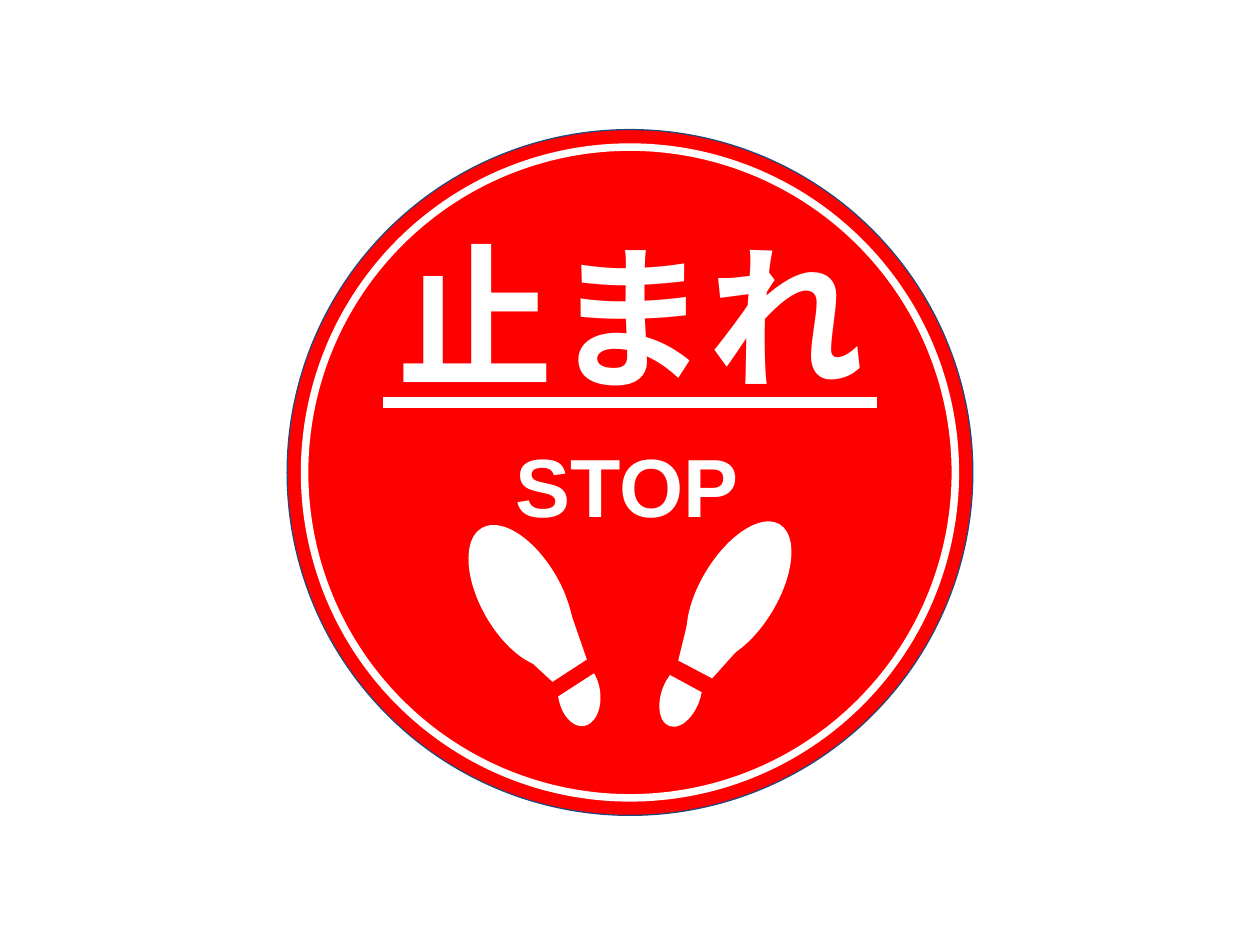
from pptx import Presentation
from pptx.dml.color import RGBColor
from pptx.enum.shapes import MSO_CONNECTOR, MSO_SHAPE
from pptx.oxml.ns import qn
from pptx.util import Pt
from lxml import etree

OVAL, TRAPEZOID, CHORD = MSO_SHAPE.OVAL, MSO_SHAPE.TRAPEZOID, MSO_SHAPE.CHORD
STRAIGHT = MSO_CONNECTOR.STRAIGHT
RED = RGBColor(0xFF, 0x00, 0x00)
WHITE = RGBColor(0xFF, 0xFF, 0xFF)
NAVY = RGBColor(0x1F, 0x49, 0x7D)

WIDTH, HEIGHT = 1008, 756
CENTER_X, CENTER_Y = 504, 378

# diameter, line colour, line width
RINGS = [(548.6, NAVY, 1), (520.6, WHITE, 6)]

# text, font, size, left, top, width, height
WORDS = [
    ("止まれ", "Calibri", 124.5, 311, 172.8, 390.2, 138.2),
    ("STOP", "Arial", 66, 405.4, 344.2, 198, 87.1),
]

# half length, y, line width
RULE = (197.3, 321.8, 9)

# shape, left, top, width, height, rotation, adjustments
FOOTPRINTS = [
    # left foot: sole, waist, heel
    (OVAL, 384.5, 414, 64.8, 126, 330.2, ()),
    (TRAPEZOID, 412.6, 489.6, 58.3, 51.1, 146.9, ()),
    (CHORD, 437, 537.8, 52.6, 33.8, 261.7, ()),
    # right foot: sole, waist, heel
    (OVAL, 560.2, 410.4, 61.9, 126, 31.1, ()),
    (TRAPEZOID, 540, 487.4, 56.2, 51.1, 207.8, ()),
    (CHORD, 518.4, 540.7, 52.6, 31, 290.5, (36.77, 186.82)),
]


def add_filled(shapes, kind, left, top, width, height, color):
    sp = shapes.add_shape(kind, Pt(left), Pt(top), Pt(width), Pt(height))
    sp.shadow.inherit = False
    sp.fill.solid()
    sp.fill.fore_color.rgb = color
    sp.line.fill.background()
    return sp


def add_ring(shapes, diameter, color, weight):
    sp = add_filled(shapes, OVAL, CENTER_X - diameter / 2,
                    CENTER_Y - diameter / 2, diameter, diameter, RED)
    sp.line.color.rgb = color
    sp.line.width = Pt(weight)


def add_word(shapes, text, font, size, left, top, width, height):
    tb = shapes.add_textbox(Pt(left), Pt(top), Pt(width), Pt(height))
    tf = tb.text_frame
    tf.word_wrap = True
    r = tf.paragraphs[0].add_run()
    r.text = text
    r.font.name = font
    r.font.size = Pt(size)
    r.font.bold = True
    r.font.color.rgb = WHITE


def add_rule(shapes, half, y, weight):
    line = shapes.add_connector(STRAIGHT, Pt(CENTER_X - half), Pt(y),
                                Pt(CENTER_X + half), Pt(y))
    line.line.color.rgb = WHITE
    line.line.width = Pt(weight)
    etree.SubElement(line._element.spPr, qn("a:effectLst"))


def main():
    prs = Presentation()
    prs.slide_width, prs.slide_height = Pt(WIDTH), Pt(HEIGHT)
    s = prs.slides.add_slide(prs.slide_layouts[6])
    shapes = s.shapes.add_group_shape().shapes

    for ring in RINGS:
        add_ring(shapes, *ring)
    for word in WORDS:
        add_word(shapes, *word)
    add_rule(shapes, *RULE)
    for kind, left, top, width, height, rotation, adjustments in FOOTPRINTS:
        sp = add_filled(shapes, kind, left, top, width, height, WHITE)
        sp.rotation = rotation
        for i, value in enumerate(adjustments):
            sp.adjustments[i] = value

    prs.save("out.pptx")


if __name__ == "__main__":
    main()
